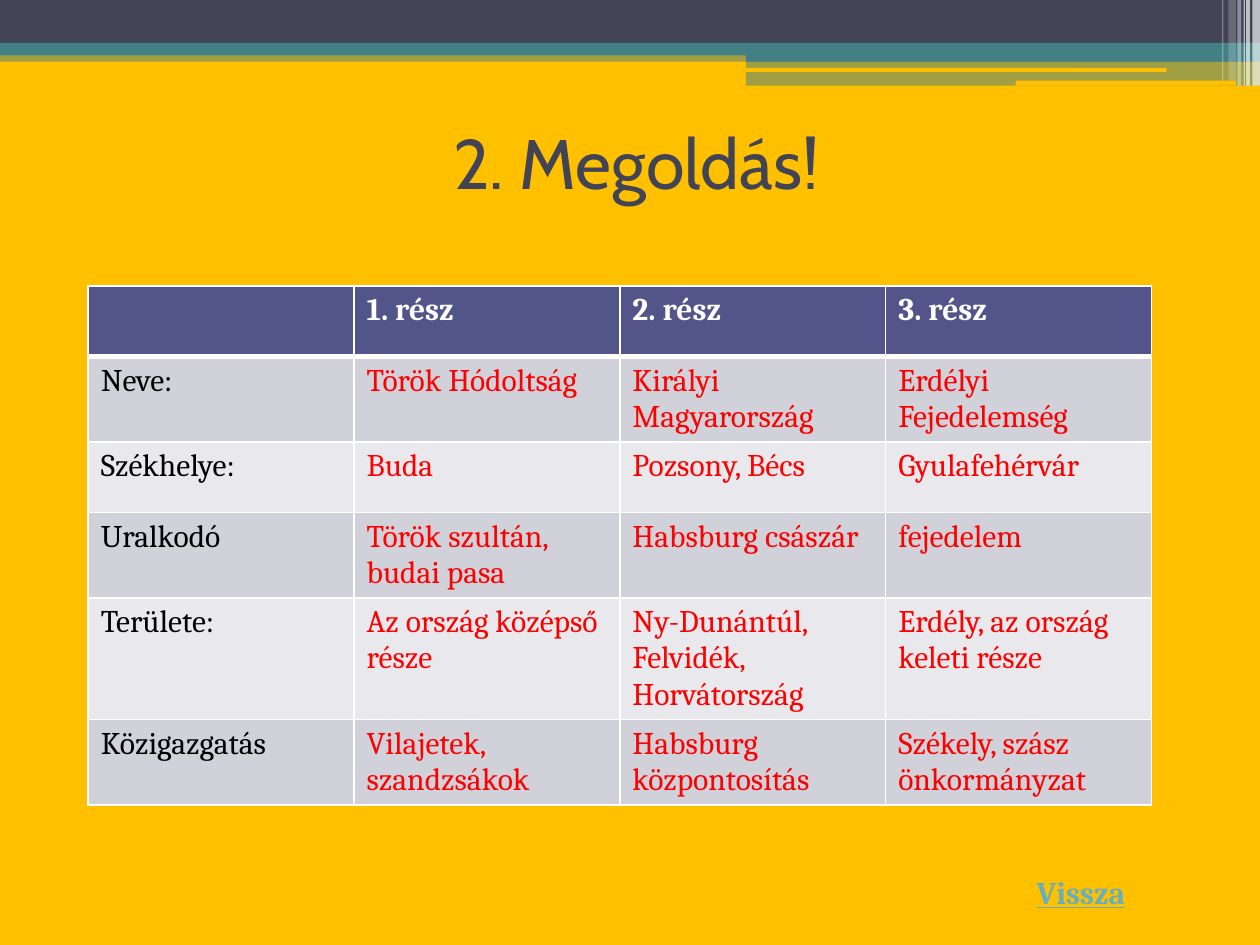
from dataclasses import dataclass

from lxml.etree import SubElement
from pptx import Presentation
from pptx.dml.color import RGBColor
from pptx.enum.shapes import MSO_SHAPE
from pptx.enum.text import MSO_ANCHOR, PP_ALIGN
from pptx.oxml.ns import qn
from pptx.util import Pt

PX = 9144  # 100 px to the inch


@dataclass(frozen=True)
class Theme:
    background: str = "FFC000"
    navy: str = "424456"
    teal: str = "438086"
    white: str = "FFFFFF"
    header: str = "53548A"
    band_dark: str = "D1D1DA"
    band_light: str = "E9E9ED"
    label: str = "000000"
    answer: str = "FF0000"
    link: str = "67AFBD"
    title_font: str = "Cabin"
    body_font: str = "Cambria"
    title_size: int = 40
    body_size: int = 18


theme = Theme()


def add_run(tf, text, font, size, color, bold=False):
    r = tf.paragraphs[0].add_run()
    r.text = text
    r.font.name = font
    r.font.size = Pt(size)
    r.font.bold = bold
    r.font.color.rgb = RGBColor.from_string(color)
    return r


def add_border(cell, side, width):
    ln = SubElement(cell._tc.get_or_add_tcPr(), qn(f"a:{side}"), w=str(Pt(width)))
    fill = SubElement(ln, qn("a:solidFill"))
    SubElement(fill, qn("a:srgbClr"), val=theme.white)


prs = Presentation()
prs.slide_width, prs.slide_height = 1000 * PX, 750 * PX
s = prs.slides.add_slide(prs.slide_layouts[5])
s.background.fill.solid()
s.background.fill.fore_color.rgb = RGBColor.from_string(theme.background)

# Header bands: left, top, width, height, colour, opacity in percent
RECT, ROUND = MSO_SHAPE.RECTANGLE, MSO_SHAPE.ROUNDED_RECTANGLE
bands = [
    (RECT, 0, 40, 1000, 9, theme.teal, 50),
    (RECT, 0, 0, 1000, 34, theme.navy, 100),
    (RECT, 0, 34, 1000, 10, theme.teal, 100),
    (RECT, 592, 39, 408, 10, theme.teal, 100),
    (RECT, 592, 48, 408, 20, theme.teal, 50),
    (ROUND, 591, 54, 335, 3, theme.background, 100),
    (ROUND, 806, 64, 175, 4, theme.background, 100),
]
# Light stripes in the corner: left, width, height, opacity
stripes = [
    (994, 6, 68, 65),
    (989, 3, 68, 65),
    (987, 1, 68, 60),
    (982, 3, 68, 40),
    (975, 6, 64, 20),
    (970, 1, 64, 30),
]
bands += [(RECT, x, 0, w, h, theme.white, a) for x, w, h, a in stripes]
for kind, x, y, w, h, color, opacity in bands:
    sp = s.shapes.add_shape(kind, x * PX, y * PX, w * PX, h * PX)
    sp.shadow.inherit = False
    sp.line.fill.background()
    sp.fill.solid()
    sp.fill.fore_color.rgb = RGBColor.from_string(color)
    if opacity < 100:
        clr = sp.fill._xPr.find(qn("a:solidFill"))[0]
        SubElement(clr, qn("a:alpha"), val=str(opacity * 1000))

title = s.shapes.title
title.left, title.top, title.width, title.height = 55 * PX, 70 * PX, 900 * PX, 117 * PX
tf = title.text_frame
tf.vertical_anchor = MSO_ANCHOR.MIDDLE
tf.paragraphs[0].alignment = PP_ALIGN.CENTER
add_run(tf, "2. Megoldás!", theme.title_font, theme.title_size, theme.navy)

rows = [
    ("", "1. rész", "2. rész", "3. rész"),
    ("Neve:", "Török Hódoltság", "Királyi Magyarország", "Erdélyi Fejedelemség"),
    ("Székhelye:", "Buda", "Pozsony, Bécs", "Gyulafehérvár"),
    ("Uralkodó", "Török szultán, budai pasa", "Habsburg császár", "fejedelem"),
    ("Területe:", "Az ország középső része", "Ny-Dunántúl, Felvidék, Horvátország",
     "Erdély, az ország keleti része"),
    ("Közigazgatás", "Vilajetek, szandzsákok", "Habsburg központosítás",
     "Székely, szász önkormányzat"),
]
table = s.shapes.add_table(len(rows), len(rows[0]), 70 * PX, 227 * PX,
                           844 * PX, len(rows) * 56 * PX).table
for i, row in enumerate(rows):
    if i == 0:
        fill = theme.header
    else:
        fill = theme.band_dark if i % 2 else theme.band_light
    for j, text in enumerate(row):
        cell = table.cell(i, j)
        add_border(cell, "lnL", 1)
        add_border(cell, "lnR", 1)
        add_border(cell, "lnT", 3 if i == 1 else 1)
        add_border(cell, "lnB", 3 if i == 0 else 1)
        cell.fill.solid()
        cell.fill.fore_color.rgb = RGBColor.from_string(fill)
        if i == 0:
            color = theme.white
        else:
            color = theme.answer if j else theme.label
        if text:
            add_run(cell.text_frame, text, theme.body_font, theme.body_size, color, i == 0)

back = s.shapes.add_textbox(813 * PX, 688 * PX, 103 * PX, 40 * PX)
back.text_frame.word_wrap = False
r = add_run(back.text_frame, "Vissza", theme.body_font, theme.body_size, theme.link, True)
r.font.underline = True

prs.save("out.pptx")
